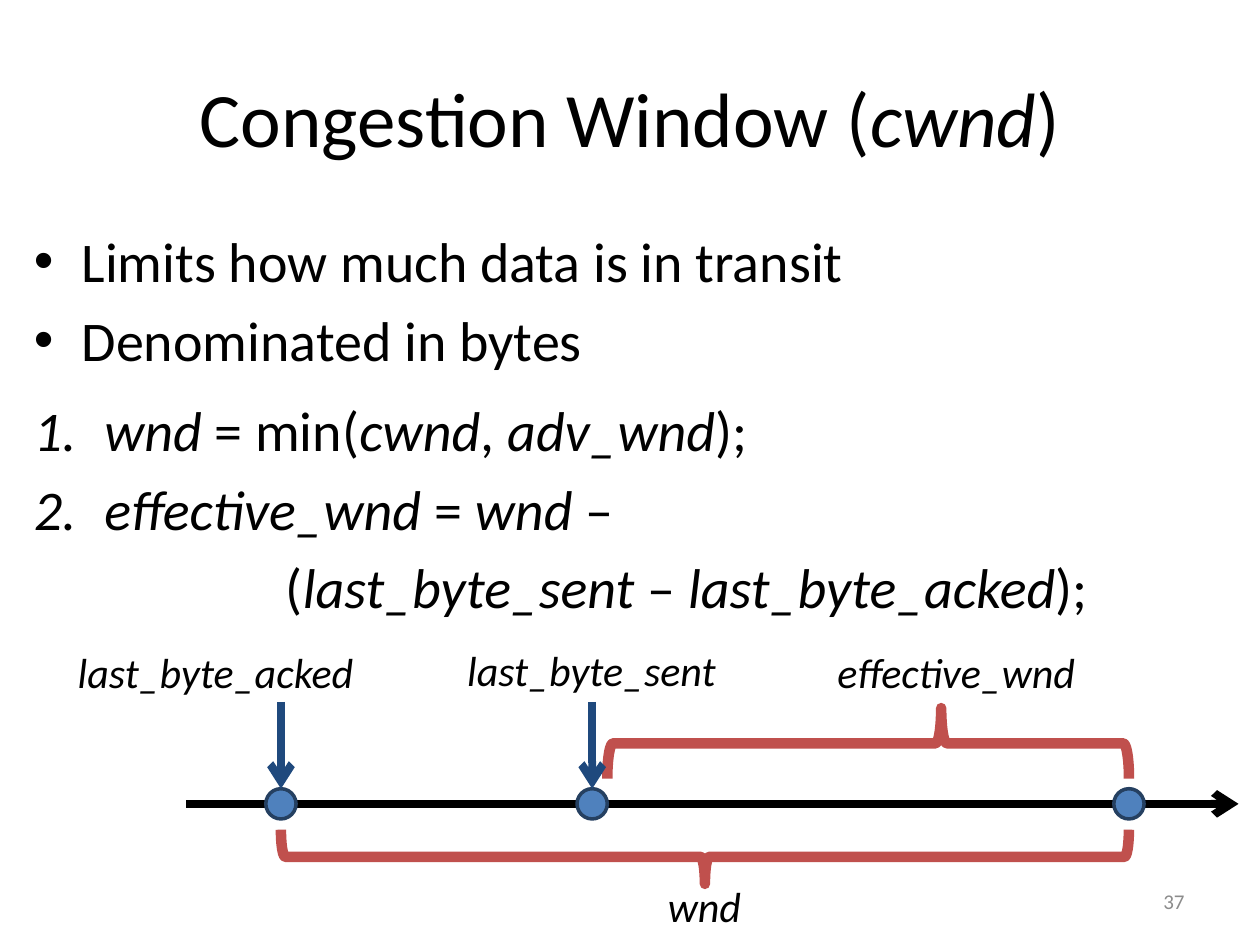
import pptx
import pptx.util
import pptx.dml.color
import pptx.enum.shapes
import pptx.enum.text
import pptx.oxml
import pptx.oxml.ns
from pptx.util import Inches

ALIGN = pptx.enum.text.PP_ALIGN
ANCHOR = pptx.enum.text.MSO_ANCHOR
SHAPES = pptx.enum.shapes.MSO_SHAPE

THEME = {
    "font": "Calibri",
    "text": "000000", "muted": "8C8C8C", "pointer": "1F497D",
    "dot": "4F81BD", "dot_line": "254061", "brace": "C0504D",
    "title_size": 44, "body_size": 32, "label_size": 24, "number_size": 12,
    "line": 4.5, "dot_width": 2, "brace_width": 6,
}

# Content: text between asterisks is italic
TITLE = "Congestion Window (*cwnd*)"
SLIDE_NUMBER = "37"
BODY = [  # text, marker, left margin, hanging indent, points before
    ("Limits how much data is in transit", "bullet", 0.38, 0.38, 6.4),
    ("Denominated in bytes", "bullet", 0.38, 0.38, 6.4),
    ("*wnd* = min(*cwnd*, *adv_wnd*);", "number", 0.56, 0.56, 13.5),
    ("*effective_wnd* = *wnd* –", "number", 0.56, 0.56, 6.4),
    ("(*last_byte_sent* – *last_byte_acked*);", None, 2, 0, 6.4),
]
LABELS = [  # text, left, top, width
    ("*last_byte_acked*", 0.39, 5.08, 2.64),
    ("*last_byte_sent*", 3.51, 5.07, 2.37),
    ("*wnd*", 5.18, 6.94, 0.82),
    ("*effective_wnd*", 6.46, 5.08, 2.26),
]
AXIS_Y, AXIS_START, AXIS_END = 6.38, 1.48, 9.83
ACKED_X, SENT_X, WINDOW_END_X = 2.23, 4.7, 8.96
DOT_SIZE = 0.24
POINTER_TOP = 5.57
BRACES = [  # start x, end x, middle y, depth, rotation, adjustments
    (ACKED_X, WINDOW_END_X, 6.8, 0.43, 270, (0.08, 0.5)),
    (SENT_X + DOT_SIZE / 2, WINDOW_END_X, 5.9, 0.56, 90, (0.08, 0.36)),
]
MARKERS = {
    "bullet": '<a:buChar {} char="•"/>',
    "number": '<a:buAutoNum {} type="arabicPeriod"/>',
}


def color(name):
    return pptx.dml.color.RGBColor.from_string(THEME[name])


def add_xml(parent, template):
    element = pptx.oxml.parse_xml(template.format(pptx.oxml.ns.nsdecls("a")))
    parent.append(element)


def write(paragraph, text, size, color_name="text"):
    for index, part in enumerate(text.split("*")):
        if part:
            run = paragraph.add_run()
            run.text = part
            run.font.name = THEME["font"]
            run.font.size = pptx.util.Pt(THEME[size])
            run.font.color.rgb = color(color_name)
            run.font.italic = index % 2 == 1


def add_text_frame(slide, left, top, width, height, anchor=ANCHOR.TOP, wrap=True):
    box = slide.shapes.add_textbox(Inches(left), Inches(top), Inches(width), Inches(height))
    box.text_frame.word_wrap = wrap
    box.text_frame.vertical_anchor = anchor
    return box.text_frame


def add_line_of_text(frame, text, size, alignment, color_name="text"):
    paragraph = frame.paragraphs[0]
    paragraph.alignment = alignment
    write(paragraph, text, size, color_name)


def add_body(slide):
    frame = add_text_frame(slide, 0.17, 1.75, 9.67, 3.67)
    for index, (text, marker, margin, hanging, before) in enumerate(BODY):
        paragraph = frame.add_paragraph() if index else frame.paragraphs[0]
        paragraph.space_before = pptx.util.Pt(before)
        properties = paragraph._p.get_or_add_pPr()
        properties.set("marL", str(Inches(margin)))
        properties.set("indent", str(-Inches(hanging)))
        if marker:
            if marker == "bullet":
                add_xml(properties, '<a:buFont {} typeface="Arial"/>')
            add_xml(properties, MARKERS[marker])
        write(paragraph, text, "body_size")


def add_arrow(slide, start, end, color_name):
    connector = slide.shapes.add_connector(
        pptx.enum.shapes.MSO_CONNECTOR.STRAIGHT, *map(Inches, start + end))
    connector.line.color.rgb = color(color_name)
    connector.line.width = pptx.util.Pt(THEME["line"])
    add_xml(connector.line._get_or_add_ln(), '<a:tailEnd {} type="arrow"/>')
    add_xml(connector._element.spPr, "<a:effectLst {}/>")
    return connector


def add_outlined(slide, kind, center_x, center_y, width, height, line_color, line_width):
    shape = slide.shapes.add_shape(
        kind, Inches(center_x - width / 2), Inches(center_y - height / 2),
        Inches(width), Inches(height))
    shape.shadow.inherit = False
    shape.line.color.rgb = color(line_color)
    shape.line.width = pptx.util.Pt(THEME[line_width])
    return shape


def add_dot(slide, x):
    dot = add_outlined(slide, SHAPES.OVAL, x, AXIS_Y, DOT_SIZE, DOT_SIZE,
                       "dot_line", "dot_width")
    dot.fill.solid()
    dot.fill.fore_color.rgb = color("dot")
    return dot


def add_brace(slide, start, end, middle_y, depth, rotation, adjustments):
    brace = add_outlined(slide, SHAPES.LEFT_BRACE, (start + end) / 2, middle_y,
                         depth, end - start, "brace", "brace_width")
    brace.rotation = rotation
    brace.fill.background()
    for index, value in enumerate(adjustments):
        brace.adjustments[index] = value


def main():
    presentation = pptx.Presentation()
    presentation.slide_width = Inches(10)
    presentation.slide_height = Inches(7.5)
    slide = presentation.slides.add_slide(presentation.slide_layouts[6])

    # Title, slide number and body
    add_line_of_text(add_text_frame(slide, 0.5, 0.3, 9, 1.25, ANCHOR.MIDDLE),
                     TITLE, "title_size", ALIGN.CENTER)
    add_line_of_text(add_text_frame(slide, 7.17, 6.95, 2.33, 0.4, ANCHOR.MIDDLE),
                     SLIDE_NUMBER, "number_size", ALIGN.RIGHT, "muted")
    add_body(slide)

    # Byte axis with its marks
    add_arrow(slide, (AXIS_START, AXIS_Y), (AXIS_END, AXIS_Y), "text")
    dots = {x: add_dot(slide, x) for x in (ACKED_X, SENT_X, WINDOW_END_X)}

    # Window braces, labels and pointers
    for brace in BRACES:
        add_brace(slide, *brace)
    for text, left, top, width in LABELS:
        frame = add_text_frame(slide, left, top, width, 0.5, wrap=False)
        add_line_of_text(frame, text, "label_size", ALIGN.CENTER)
    for x in (ACKED_X, SENT_X):
        pointer = add_arrow(slide, (x, POINTER_TOP), (x, AXIS_Y - DOT_SIZE / 2), "pointer")
        pointer.end_connect(dots[x], 0)

    presentation.save("out.pptx")


if __name__ == "__main__":
    main()
